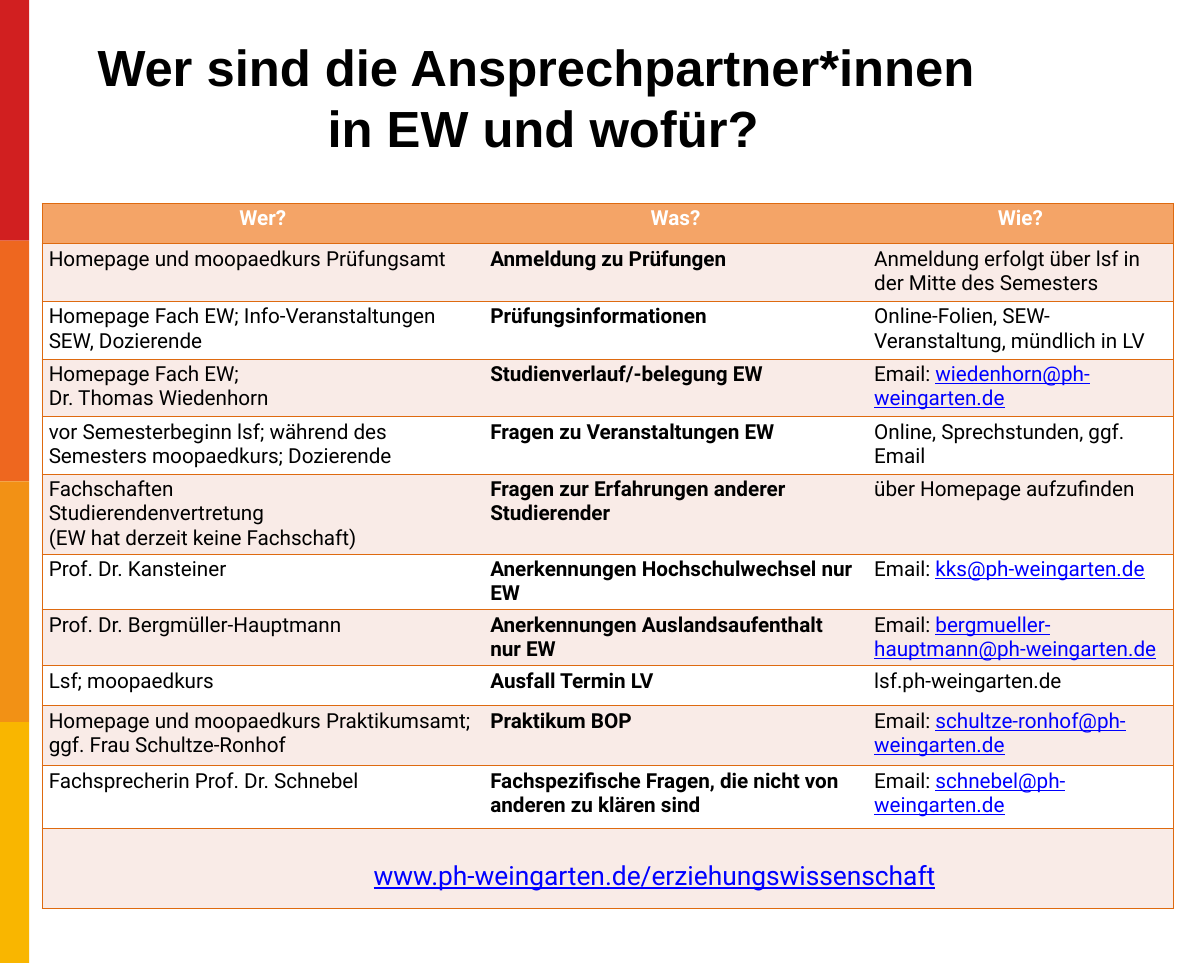
import pptx
import pptx.dml.color
import pptx.enum.shapes
import pptx.enum.text
import pptx.oxml
import pptx.oxml.ns
import pptx.util

Inches, Pt = pptx.util.Inches, pptx.util.Pt
RGB = pptx.dml.color.RGBColor.from_string
ALIGN = pptx.enum.text.PP_ALIGN
COLORS = {"text": "000000", "white": "FFFFFF", "link": "0000FF", "header": "F4A467",
          "band": "F9EBE7", "border": "DE6A10"}
STRIPES = ["D11F20", "EE671F", "F29115", "F9B600"]


def set_font(font, name, size, color, bold=False, underline=False):
    font.name, font.size = name, Pt(size)
    font.bold, font.underline = bold, underline
    font.color.rgb = RGB(COLORS[color])


def set_borders(cell, visible):
    """Draw the sides listed in visible (L, R, T, B) and hide the others."""
    properties = cell._tc.get_or_add_tcPr()
    for side in "LRTB":
        fill = (f'<a:solidFill><a:srgbClr val="{COLORS["border"]}"/></a:solidFill>'
                if side in visible else "<a:noFill/>")
        properties.append(pptx.oxml.parse_xml(
            f'<a:ln{side} {pptx.oxml.ns.nsdecls("a")} w="12700">{fill}</a:ln{side}>'))


presentation = pptx.Presentation()
presentation.slide_width, presentation.slide_height = Inches(17.78), Inches(14.22)
slide = presentation.slides.add_slide(presentation.slide_layouts[5])

# Coloured stripes on the left edge
stripe_height = 14.22 / len(STRIPES)
for index, color in enumerate(STRIPES):
    stripe = slide.shapes.add_shape(
        pptx.enum.shapes.MSO_SHAPE.RECTANGLE, 0, Inches(index * stripe_height),
        Inches(0.43), Inches(stripe_height))
    stripe.shadow.inherit = False
    stripe.fill.solid()
    stripe.fill.fore_color.rgb = RGB(color)
    stripe.line.fill.background()

# Title
title = slide.shapes.title
title.left, title.top = Inches(0.31), Inches(0.46)
title.width, title.height = Inches(15.43), Inches(1.93)
frame = title.text_frame
frame.text = "Wer sind die Ansprechpartner*innen \vin EW und wofür?"
frame.auto_size = pptx.enum.text.MSO_AUTO_SIZE.NONE
frame.vertical_anchor = pptx.enum.text.MSO_ANCHOR.MIDDLE
frame.margin_left = frame.margin_right = frame.margin_top = frame.margin_bottom = Inches(0.06)
frame.paragraphs[0].alignment = ALIGN.CENTER
set_font(frame.paragraphs[0].font, "Arial", 54, "text", bold=True)

# Table of contacts: who, what, how
CONTACTS = [
    ("Wer?", "Was?", "Wie?"),
    ("Homepage und moopaedkurs Prüfungsamt", "Anmeldung zu Prüfungen",
     "Anmeldung erfolgt über lsf in der Mitte des Semesters"),
    ("Homepage Fach EW; Info-Veranstaltungen SEW, Dozierende", "Prüfungsinformationen",
     "Online-Folien, SEW-Veranstaltung, mündlich in LV"),
    ("Homepage Fach EW;\nDr. Thomas Wiedenhorn", "Studienverlauf/-belegung EW",
     "Email: wiedenhorn@ph-weingarten.de"),
    ("vor Semesterbeginn lsf; während des Semesters moopaedkurs; Dozierende",
     "Fragen zu Veranstaltungen EW", "Online, Sprechstunden, ggf. Email"),
    ("Fachschaften\vStudierendenvertretung\v(EW hat derzeit keine Fachschaft)",
     "Fragen zur Erfahrungen anderer Studierender", "über Homepage aufzufinden"),
    ("Prof. Dr. Kansteiner", "Anerkennungen Hochschulwechsel nur EW",
     "Email: kks@ph-weingarten.de"),
    ("Prof. Dr. Bergmüller-Hauptmann", "Anerkennungen Auslandsaufenthalt\nnur EW",
     "Email: bergmueller-hauptmann@ph-weingarten.de"),
    ("Lsf; moopaedkurs", "Ausfall Termin LV", "lsf.ph-weingarten.de"),
    ("Homepage und moopaedkurs Praktikumsamt;\vggf. Frau Schultze-Ronhof", "Praktikum BOP",
     "Email: schultze-ronhof@ph-weingarten.de"),
    ("Fachsprecherin Prof. Dr. Schnebel",
     "Fachspezifische Fragen, die nicht von anderen zu klären sind",
     "Email: schnebel@ph-weingarten.de"),
    ("", "", ""),
]
COLUMN_WIDTHS = [6.52, 5.67, 4.52]
ROW_HEIGHTS = [0.6, 0.85, 0.85, 0.85, 0.85, 1.18, 0.82, 0.83, 0.59, 0.89, 0.92, 1.18]
BORDERS = ["LTB", "TB", "RTB"]

table = slide.shapes.add_table(
    len(CONTACTS), len(COLUMN_WIDTHS), Inches(0.62), Inches(3),
    Inches(sum(COLUMN_WIDTHS)), Inches(sum(ROW_HEIGHTS))).table
table.horz_banding = False
for column, width in zip(table.columns, COLUMN_WIDTHS):
    column.width = Inches(width)
for row_index, (contact, height) in enumerate(zip(CONTACTS, ROW_HEIGHTS)):
    table.rows[row_index].height = Inches(height)
    is_header = row_index == 0
    fill_name = "header" if is_header else "band" if row_index % 2 else "white"
    for column_index, text in enumerate(contact):
        cell = table.cell(row_index, column_index)
        set_borders(cell, BORDERS[column_index])
        cell.fill.solid()
        cell.fill.fore_color.rgb = RGB(COLORS[fill_name])
        label, separator, address = text.partition("Email: ")
        cell.text = label + separator
        for paragraph in cell.text_frame.paragraphs:
            paragraph.alignment = ALIGN.CENTER if is_header else ALIGN.LEFT
            set_font(paragraph.font, "Roboto", 22, "white" if is_header else "text",
                     bold=is_header or column_index == 1)
        if address:
            run = cell.text_frame.paragraphs[0].add_run()
            run.text = address
            set_font(run.font, "Roboto", 22, "link", underline=True)

# Web address over the last row
website = slide.shapes.add_textbox(Inches(5.22), Inches(12.69), Inches(8.89), Inches(0.95))
website.text_frame.word_wrap = True
paragraph = website.text_frame.paragraphs[0]
paragraph.text = "www.ph-weingarten.de/erziehungswissenschaft"
paragraph.alignment = ALIGN.CENTER
paragraph.line_spacing = 0.9
set_font(paragraph.font, "Roboto", 28, "link", underline=True)

presentation.save("out.pptx")
